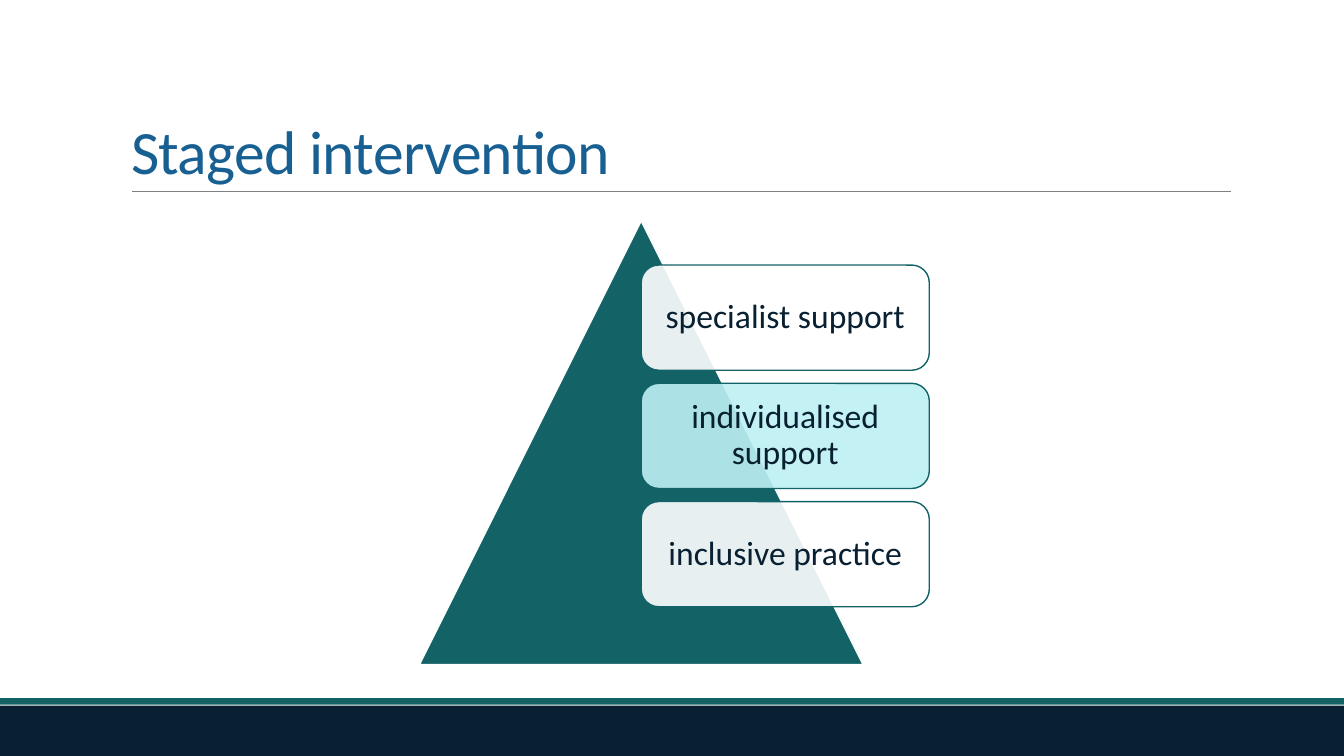
import pptx
import pptx.util
import pptx.dml.color
import pptx.enum.shapes
import pptx.enum.text
import pptx.oxml.ns
from lxml import etree
from pptx.util import Cm

COLOURS = {
    "navy": "082031",
    "teal": "136266",
    "title": "186092",
    "rule": "808080",
    "white": "FFFFFF",
    "aqua": "BDF0F3",
}
FONT = "Calibri"
SHAPES = pptx.enum.shapes.MSO_SHAPE
ALIGN = pptx.enum.text.PP_ALIGN
ANCHOR = pptx.enum.text.MSO_ANCHOR
SLIDE_WIDTH, SLIDE_HEIGHT = 33.87, 19.05

# Support stages from the top of the pyramid down
STAGES = [
    ("specialist support", "white"),
    ("individualised support", "aqua"),
    ("inclusive practice", "white"),
]
STAGE_LEFT, STAGE_TOP, STAGE_WIDTH, STAGE_HEIGHT = 16.16, 6.68, 7.26, 2.65
STAGE_PITCH = 2.98


def colour(name):
    return pptx.dml.color.RGBColor.from_string(COLOURS[name])


def add_run(paragraph, text, size, colour_name):
    run = paragraph.add_run()
    run.text = text
    run.font.name = FONT
    run.font.size = pptx.util.Pt(size)
    run.font.color.rgb = colour(colour_name)
    return run


def add_filled_shape(slide, kind, left, top, width, height, fill, line=None):
    shape = slide.shapes.add_shape(kind, Cm(left), Cm(top), Cm(width), Cm(height))
    shape.shadow.inherit = False
    shape.fill.solid()
    shape.fill.fore_color.rgb = colour(fill)
    if line:
        shape.line.color.rgb = colour(line)
        shape.line.width = pptx.util.Pt(1)
    else:
        shape.line.fill.background()
    return shape


def set_opacity(shape, percent):
    fill_colour = shape._element.spPr.find("a:solidFill/a:srgbClr", pptx.oxml.ns._nsmap)
    alpha = etree.SubElement(fill_colour, pptx.oxml.ns.qn("a:alpha"))
    alpha.set("val", str(percent * 1000))


def add_rule(slide, left, right, top):
    rule = slide.shapes.add_connector(
        pptx.enum.shapes.MSO_CONNECTOR.STRAIGHT, Cm(left), Cm(top), Cm(right), Cm(top))
    rule.line.color.rgb = colour("rule")
    rule.line.width = pptx.util.Pt(0.5)
    etree.SubElement(rule._element.spPr, pptx.oxml.ns.qn("a:effectLst"))


def fill_title(slide, text):
    title = slide.shapes.title
    title.left, title.top, title.width, title.height = Cm(3.05), Cm(0.79), Cm(27.94), Cm(4.04)
    frame = title.text_frame
    frame.auto_size = pptx.enum.text.MSO_AUTO_SIZE.NONE
    frame.vertical_anchor = ANCHOR.BOTTOM
    paragraph = frame.paragraphs[0]
    paragraph.alignment = ALIGN.LEFT
    paragraph.line_spacing = 0.85
    run = add_run(paragraph, text, 44, "title")
    run._r.get_or_add_rPr().set("spc", "-50")


def add_stage(slide, text, fill, top):
    box = add_filled_shape(slide, SHAPES.ROUNDED_RECTANGLE, STAGE_LEFT, top,
                           STAGE_WIDTH, STAGE_HEIGHT, fill, "teal")
    set_opacity(box, 90)
    frame = box.text_frame
    frame.word_wrap = True
    frame.vertical_anchor = ANCHOR.MIDDLE
    frame.margin_left = frame.margin_right = Cm(0.38)
    frame.margin_top = frame.margin_bottom = Cm(0.38)
    paragraph = frame.paragraphs[0]
    paragraph.alignment = ALIGN.CENTER
    paragraph.line_spacing = 0.9
    add_run(paragraph, text, 24, "navy")


def main():
    presentation = pptx.Presentation()
    presentation.slide_width = Cm(SLIDE_WIDTH)
    presentation.slide_height = Cm(SLIDE_HEIGHT)
    slide = presentation.slides.add_slide(presentation.slide_layouts[5])

    # Footer bands
    add_filled_shape(slide, SHAPES.RECTANGLE, 0, 17.78, SLIDE_WIDTH, 1.27, "navy")
    add_filled_shape(slide, SHAPES.RECTANGLE, 0, 17.59, SLIDE_WIDTH, 0.17, "teal")

    # Title and rule
    fill_title(slide, "Staged intervention")
    add_rule(slide, 3.33, 31.01, 4.82)

    # Pyramid with its stages
    add_filled_shape(slide, SHAPES.ISOSCELES_TRIANGLE, 10.57, 5.57, 11.18, 11.18,
                     "teal", "white")
    for index, (text, fill) in enumerate(STAGES):
        add_stage(slide, text, fill, STAGE_TOP + index * STAGE_PITCH)

    presentation.save("out.pptx")


if __name__ == "__main__":
    main()
